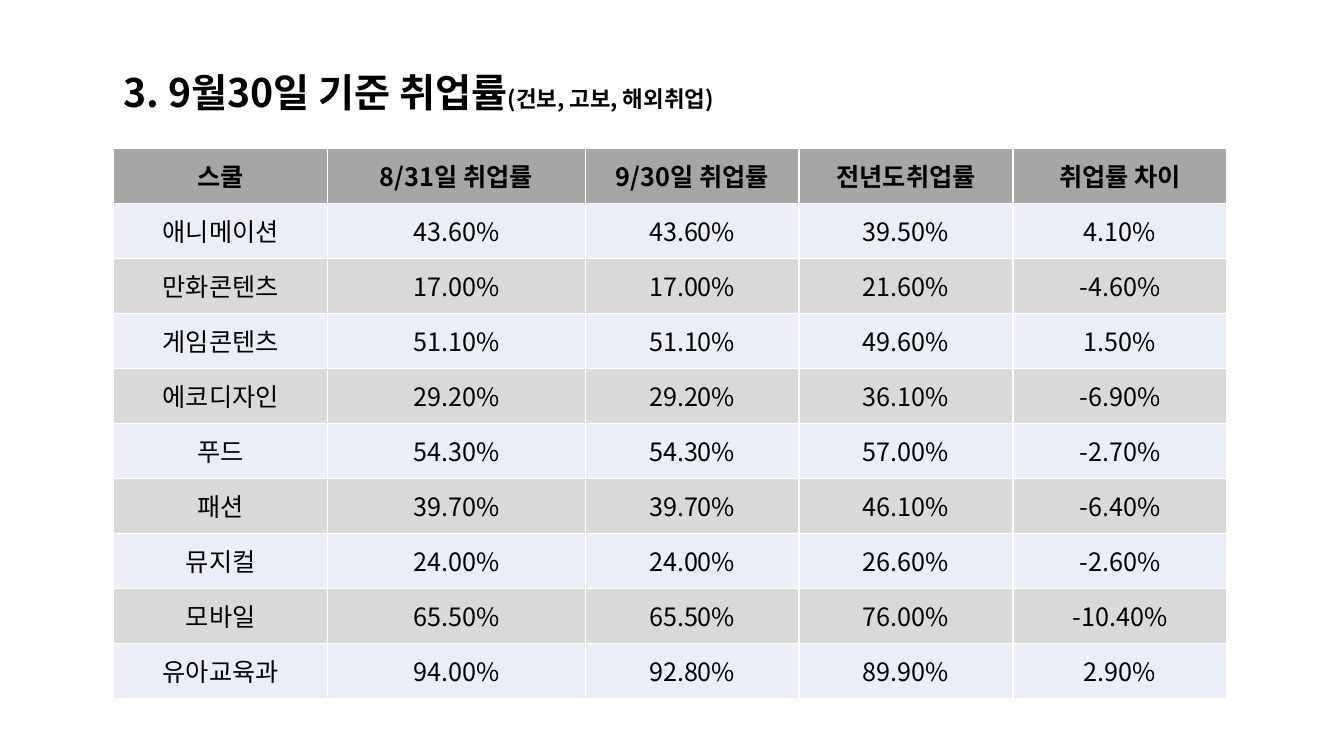
from lxml.etree import SubElement
from pptx import Presentation
from pptx.dml.color import RGBColor
from pptx.enum.text import MSO_ANCHOR, PP_ALIGN
from pptx.oxml.ns import qn
from pptx.util import Pt

FONT = "Noto Sans CJK KR"
BLACK = RGBColor(0x00, 0x00, 0x00)
WHITE = RGBColor(0xFF, 0xFF, 0xFF)
HEADER_GRAY = RGBColor(0xA6, 0xA6, 0xA6)
BAND_BLUE = RGBColor(0xEA, 0xEF, 0xF7)
BAND_GRAY = RGBColor(0xD9, 0xD9, 0xD9)

COLUMN_WIDTHS = [152.8, 184, 152.8, 152.8, 152.8]
HEADINGS = ["스쿨", "8/31일 취업률", "9/30일 취업률", "전년도취업률", "취업률 차이"]
SCHOOLS = [
    ["애니메이션", "43.60%", "43.60%", "39.50%", "4.10%"],
    ["만화콘텐츠", "17.00%", "17.00%", "21.60%", "-4.60%"],
    ["게임콘텐츠", "51.10%", "51.10%", "49.60%", "1.50%"],
    ["에코디자인", "29.20%", "29.20%", "36.10%", "-6.90%"],
    ["푸드", "54.30%", "54.30%", "57.00%", "-2.70%"],
    ["패션", "39.70%", "39.70%", "46.10%", "-6.40%"],
    ["뮤지컬", "24.00%", "24.00%", "26.60%", "-2.60%"],
    ["모바일", "65.50%", "65.50%", "76.00%", "-10.40%"],
    ["유아교육과", "94.00%", "92.80%", "89.90%", "2.90%"],
]


def add_text(para, text, size=18, bold=False, color=BLACK):
    span = para.add_run()
    span.text = text
    span.font.name = FONT
    span.font.size = Pt(size)
    span.font.bold = bold
    span.font.color.rgb = color
    SubElement(span.font._element, qn("a:ea"), typeface=FONT)


def set_borders(cell, color=WHITE, width=1):
    properties = cell._tc.get_or_add_tcPr()
    for index, side in enumerate(("lnL", "lnR", "lnT", "lnB")):
        line = SubElement(properties, qn(f"a:{side}"), w=str(Pt(width)))
        fill = SubElement(line, qn("a:solidFill"))
        SubElement(fill, qn("a:srgbClr"), val=str(color))
        properties.insert(index, line)


def fill_cell(cell, text, color, bold):
    cell.fill.solid()
    cell.fill.fore_color.rgb = color
    set_borders(cell)
    cell.margin_left = cell.margin_right = cell.margin_top = cell.margin_bottom = 0
    cell.vertical_anchor = MSO_ANCHOR.MIDDLE
    para = cell.text_frame.paragraphs[0]
    para.alignment = PP_ALIGN.CENTER
    add_text(para, text, bold=bold)


def place_title(page, left, top, width, height):
    title = page.shapes.title
    title.left, title.top, title.width, title.height = map(Pt, (left, top, width, height))
    frame = title.text_frame
    frame.word_wrap = True
    frame.vertical_anchor = MSO_ANCHOR.MIDDLE
    para = frame.paragraphs[0]
    para.alignment = PP_ALIGN.LEFT
    para.line_spacing = 0.9
    add_text(para, "3. 9월30일 기준 취업률", size=28, bold=True)
    add_text(para, "(건보, 고보, 해외취업)", size=16, bold=True)


def place_rate_table(page, left, top, width, height):
    rows = [HEADINGS] + SCHOOLS
    table = page.shapes.add_table(
        len(rows), len(HEADINGS), Pt(left), Pt(top), Pt(width), Pt(height)
    ).table
    for column, column_width in zip(table.columns, COLUMN_WIDTHS):
        column.width = Pt(column_width)
    for row_index, values in enumerate(rows):
        table.rows[row_index].height = Pt(height / len(rows))
        is_header = row_index == 0
        band = BAND_BLUE if row_index % 2 else BAND_GRAY
        for column_index, value in enumerate(values):
            fill_cell(table.cell(row_index, column_index), value,
                      color=HEADER_GRAY if is_header else band, bold=is_header)


def main():
    deck = Presentation()
    deck.slide_width, deck.slide_height = Pt(960), Pt(540)
    page = deck.slides.add_slide(deck.slide_layouts[5])
    place_title(page, 81.2, 37.4, 828, 61.2)
    place_rate_table(page, 81.2, 106, sum(COLUMN_WIDTHS), 393)
    deck.save("out.pptx")


if __name__ == "__main__":
    main()
